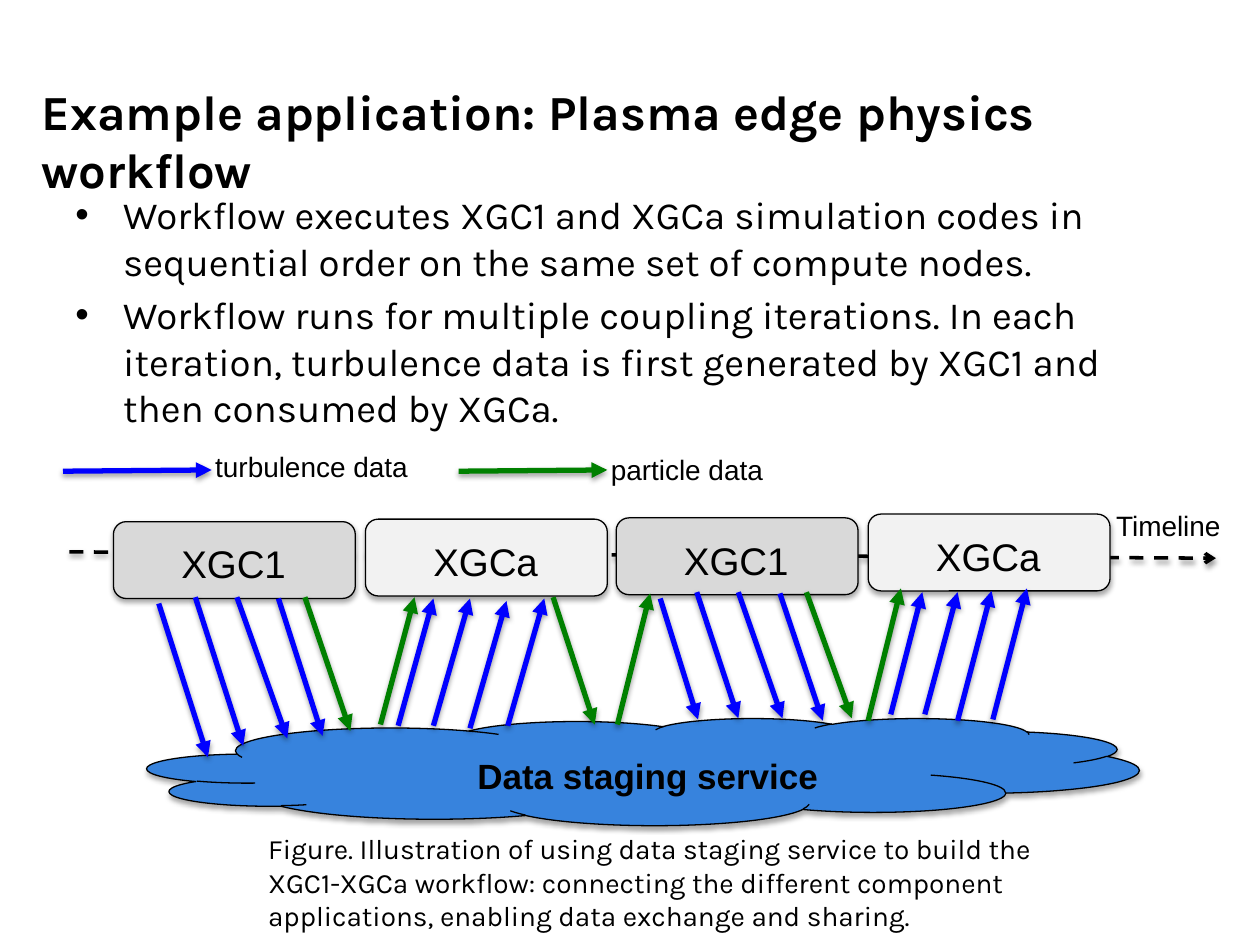
from lxml import etree
from pptx import Presentation
from pptx import util as u
from pptx.dml.color import RGBColor
from pptx.enum import dml, shapes, text
from pptx.oxml import ns

BLACK = RGBColor(0x00, 0x00, 0x00)
BLUE = RGBColor(0x00, 0x00, 0xFF)
GREEN = RGBColor(0x00, 0x80, 0x00)
GRAY = RGBColor(0xD9, 0xD9, 0xD9)
PALE = RGBColor(0xF2, 0xF2, 0xF2)
CLOUD = RGBColor(0x37, 0x83, 0xDD)

# Text formats
HEAD = dict(name="Karla", size=u.Pt(28), bold=True)
BODY = dict(name="Karla", size=u.Pt(22))
NOTE = dict(name="Karla", size=u.Pt(16))
CODE = dict(name="Arial", size=u.Pt(22))
KEY = dict(name="Arial", size=u.Pt(16))
STORE = dict(name="Arial", size=u.Pt(20), bold=True)

# Shadow opacity in percent and distance in points
SHAPE_SHADE = (35, 1.8)
LINE_SHADE = (38, 1.6)


def node(parent, tag, **attrs):
    return etree.SubElement(parent, ns.qn(tag), {k: str(v) for k, v in attrs.items()})


class Page:
    def __init__(self, deck):
        self.slide = deck.slides.add_slide(deck.slide_layouts[5])
        self.items = self.slide.shapes

    def place(self, shape, left, top, width, height):
        shape.left, shape.top = u.Inches(left), u.Inches(top)
        shape.width, shape.height = u.Inches(width), u.Inches(height)

    def style(self, font, form):
        for name, value in form.items():
            setattr(font, name, value)
        font.color.rgb = BLACK

    def shade(self, shape, alpha, dist):
        effects = node(shape._element.spPr, "a:effectLst")
        outer = node(effects, "a:outerShdw", blurRad=u.Pt(3.1), dist=u.Pt(dist),
                     dir=90 * 60000, rotWithShape=0)
        color = node(outer, "a:srgbClr", val=BLACK)
        node(color, "a:alpha", val=alpha * 1000)

    def title(self, words, box):
        shape = self.items.title
        self.place(shape, *box)
        frame = shape.text_frame
        frame.text = words
        frame.word_wrap = True
        frame.auto_size = text.MSO_AUTO_SIZE.NONE
        frame.vertical_anchor = text.MSO_ANCHOR.MIDDLE
        frame.paragraphs[0].alignment = text.PP_ALIGN.LEFT
        self.style(frame.paragraphs[0].runs[0].font, HEAD)

    def label(self, words, box, form, wrap=True):
        frame = self.items.add_textbox(*map(u.Inches, box)).text_frame
        frame.word_wrap = wrap
        frame.auto_size = text.MSO_AUTO_SIZE.SHAPE_TO_FIT_TEXT
        frame.text = words
        self.style(frame.paragraphs[0].runs[0].font, form)

    def bullets(self, lines, box):
        frame = self.items.add_textbox(*map(u.Inches, box)).text_frame
        frame.word_wrap = True
        frame.text = "\n".join(lines)
        for i, para in enumerate(frame.paragraphs):
            props = para._p.get_or_add_pPr()
            props.set("marL", str(u.Inches(0.38)))
            props.set("indent", str(u.Inches(-0.38)))
            node(props, "a:buFont", typeface="Arial")
            node(props, "a:buChar", char="•")
            if i:
                para.space_before = u.Pt(4.4)
            self.style(para.runs[0].font, BODY)

    def block(self, kind, box, color):
        shape = self.items.add_shape(kind, *map(u.Inches, box))
        shape.fill.solid()
        shape.fill.fore_color.rgb = color
        shape.line.color.rgb = BLACK
        shape.line.width = u.Pt(0.75)
        self.shade(shape, *SHAPE_SHADE)

    def arrow(self, ends, color, width=3, head="triangle", dash=None):
        line = self.items.add_connector(shapes.MSO_CONNECTOR.STRAIGHT, *map(u.Inches, ends))
        line.line.color.rgb = color
        line.line.width = u.Pt(width)
        if dash:
            line.line.dash_style = dash
        node(line.line._get_or_add_ln(), "a:tailEnd", type=head)
        self.shade(line, *LINE_SHADE)


def main():
    deck = Presentation()
    deck.slide_width, deck.slide_height = u.Inches(10), u.Inches(7.5)
    page = Page(deck)

    # Title and bullets
    page.title("Example application: Plasma edge physics workflow", (0.23, 0.67, 9.63, 0.88))
    page.bullets([
        "Workflow executes XGC1 and XGCa simulation codes in sequential order "
        "on the same set of compute nodes.",
        "Workflow runs for multiple coupling iterations. In each iteration, turbulence "
        "data is first generated by XGC1 and then consumed by XGCa.",
    ], (0.5, 1.47, 9, 2.16))

    # Timeline with the alternating codes
    page.arrow((0.55, 4.38, 9.65, 4.43), BLACK, 2, "arrow", dml.MSO_LINE.DASH)
    steps = [("XGC1", 0.9, 4.14, GRAY), ("XGCa", 2.9, 4.12, PALE),
             ("XGC1", 4.89, 4.11, GRAY), ("XGCa", 6.89, 4.08, PALE)]
    for name, left, top, color in steps:
        page.block(shapes.MSO_SHAPE.ROUNDED_RECTANGLE, (left, top, 1.92, 0.61), color)
        page.label(name, (left + 0.44, top + 0.1, 1.05, 0.47), CODE, wrap=False)
    page.label("Timeline", (8.76, 3.99, 1.06, 0.37), KEY)

    # Staging service
    page.block(shapes.MSO_SHAPE.CLOUD, (1.17, 5.7, 7.87, 0.85), CLOUD)
    page.label("Data staging service", (3.69, 5.94, 2.94, 0.41), STORE)

    # Legend
    keys = [("turbulence data", 0.5, 1.61, 3.52, BLUE),
            ("particle data", 3.64, 4.75, 3.54, GREEN)]
    for name, start, left, top, color in keys:
        page.arrow((start, 3.74, start + 1.18, 3.73), color)
        page.label(name, (left, top, 1.96, 0.37), KEY)

    # Data flows between the codes and the service
    flows = {
        BLUE: [
            (1.26, 4.79, 1.65, 6.01), (1.55, 4.74, 1.93, 5.92),
            (1.88, 4.74, 2.28, 5.86), (2.21, 4.75, 2.56, 5.84),
            (3.16, 5.76, 3.44, 4.75), (3.44, 5.76, 3.73, 4.75),
            (3.73, 5.78, 4.02, 4.77), (4.03, 5.76, 4.32, 4.75),
            (5.24, 4.75, 5.54, 5.71), (5.53, 4.7, 5.86, 5.7),
            (5.86, 4.7, 6.21, 5.7), (6.19, 4.71, 6.53, 5.72),
            (7.07, 5.67, 7.32, 4.7), (7.34, 5.67, 7.6, 4.7),
            (7.6, 5.72, 7.87, 4.69), (7.88, 5.71, 8.15, 4.67),
        ],
        GREEN: [
            (2.42, 4.74, 2.78, 5.8), (3.02, 5.75, 3.29, 4.74),
            (4.39, 4.74, 4.72, 5.75), (4.9, 5.75, 5.16, 4.71),
            (6.4, 4.7, 6.76, 5.7), (6.89, 5.72, 7.15, 4.67),
        ],
    }
    for color, group in flows.items():
        for ends in group:
            page.arrow(ends, color)

    # Caption
    page.label("Figure. Illustration of using data staging service to build the XGC1-XGCa "
               "workflow: connecting the different component applications, enabling data "
               "exchange and sharing.", (2.03, 6.55, 6.63, 0.91), NOTE)

    deck.save("out.pptx")


if __name__ == "__main__":
    main()
